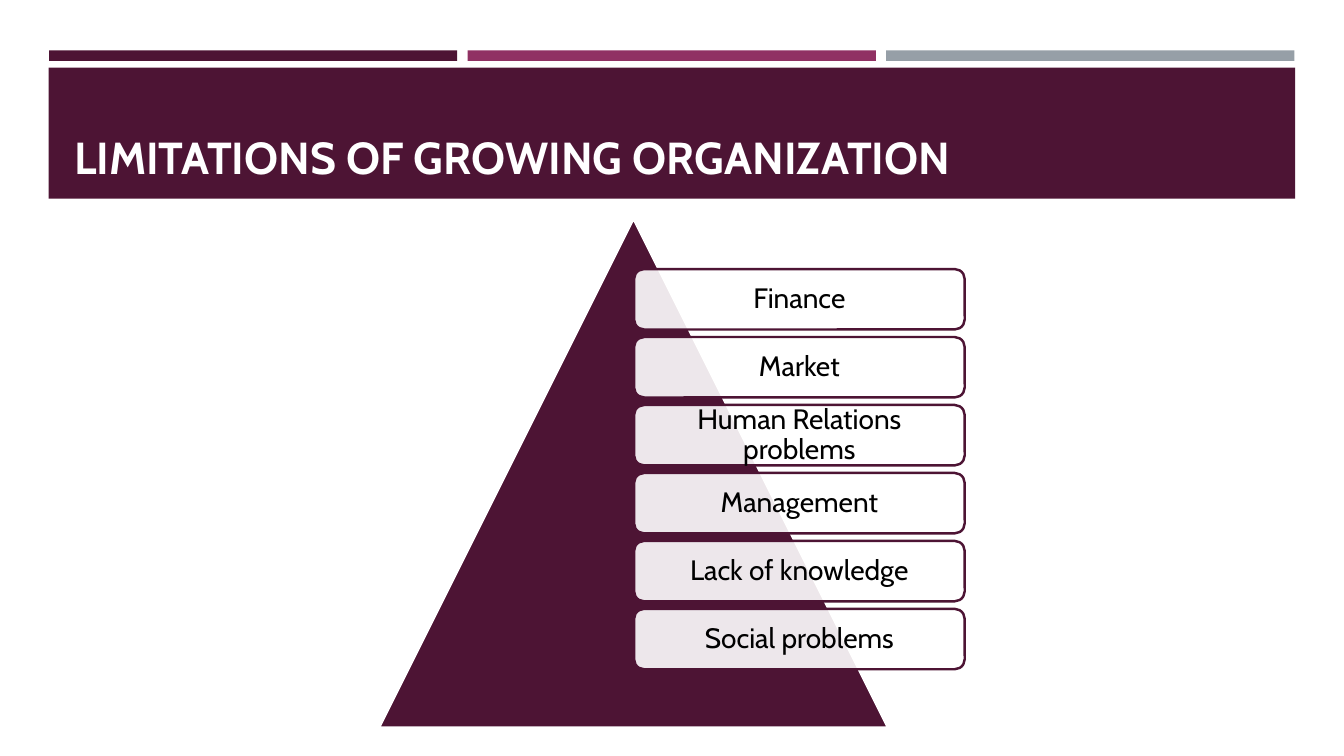
from lxml import etree
from pptx import Presentation
from pptx.dml.color import RGBColor
from pptx.enum.shapes import MSO_SHAPE
from pptx.enum.text import MSO_ANCHOR, PP_ALIGN
from pptx.oxml.ns import qn
from pptx.util import Pt

RECT = MSO_SHAPE.RECTANGLE
TRIANGLE = MSO_SHAPE.ISOSCELES_TRIANGLE
ROUNDED = MSO_SHAPE.ROUNDED_RECTANGLE
MIDDLE, BOTTOM = MSO_ANCHOR.MIDDLE, MSO_ANCHOR.BOTTOM
LEFT, CENTER = PP_ALIGN.LEFT, PP_ALIGN.CENTER

PLUM = RGBColor(0x4D, 0x14, 0x34)
MAGENTA = RGBColor(0x90, 0x31, 0x63)
GRAY = RGBColor(0x96, 0x9F, 0xA7)
WHITE = RGBColor(0xFF, 0xFF, 0xFF)
BLACK = RGBColor(0x00, 0x00, 0x00)

FONT = "Cabin"
LIMITATIONS = ["Finance", "Market", "Human Relations problems",
               "Management", "Lack of knowledge", "Social problems"]


def add_filled(s, kind, x, y, w, h, fill, line=None):
    sp = s.shapes.add_shape(kind, Pt(x), Pt(y), Pt(w), Pt(h))
    sp.shadow.inherit = False
    sp.fill.solid()
    sp.fill.fore_color.rgb = fill
    if line is None:
        sp.line.fill.background()
    else:
        sp.line.color.rgb = line
        sp.line.width = Pt(1.75)
    return sp


def set_opacity(sp, percent):
    color = sp.fill._xPr.find(qn("a:solidFill"))[0]
    etree.SubElement(color, qn("a:alpha")).set("val", str(percent * 1000))


def write(sp, text, size, color, anchor, align, bold=False):
    tf = sp.text_frame
    tf.word_wrap = True
    tf.vertical_anchor = anchor
    p = tf.paragraphs[0]
    p.text = text
    p.alignment = align
    p.line_spacing = 0.9
    p.font.name = FONT
    p.font.size = Pt(size)
    p.font.bold = bold
    p.font.color.rgb = color
    return tf


def add_header(s, title):
    for i, color in enumerate([PLUM, MAGENTA, GRAY]):
        add_filled(s, RECT, 35 + i * 299, 36, 291.6, 7.5, color)
    add_filled(s, RECT, 34.8, 48.4, 890.4, 93.6, PLUM)
    box = s.shapes.add_textbox(Pt(46), Pt(55.4), Pt(868.5), Pt(80))
    write(box, title, 32, WHITE, BOTTOM, LEFT, bold=True)


def add_limitation(s, y, text):
    sp = add_filled(s, ROUNDED, 452.9, y, 236.2, 43.2, WHITE, PLUM)
    set_opacity(sp, 90)
    tf = write(sp, text, 20, BLACK, MIDDLE, CENTER)
    tf.margin_left = tf.margin_right = Pt(6)
    tf.margin_top = tf.margin_bottom = Pt(6)


def main():
    prs = Presentation()
    prs.slide_width, prs.slide_height = Pt(960), Pt(540)
    s = prs.slides.add_slide(prs.slide_layouts[6])

    # Coloured bars and title banner
    add_header(s, "LIMITATIONS OF GROWING ORGANIZATION")

    # Pyramid with its list of limitations
    add_filled(s, TRIANGLE, 270.7, 156.2, 363.6, 363.6, PLUM, WHITE)
    for i, text in enumerate(LIMITATIONS):
        add_limitation(s, 192.2 + i * 48.54, text)

    prs.save("out.pptx")


if __name__ == "__main__":
    main()
